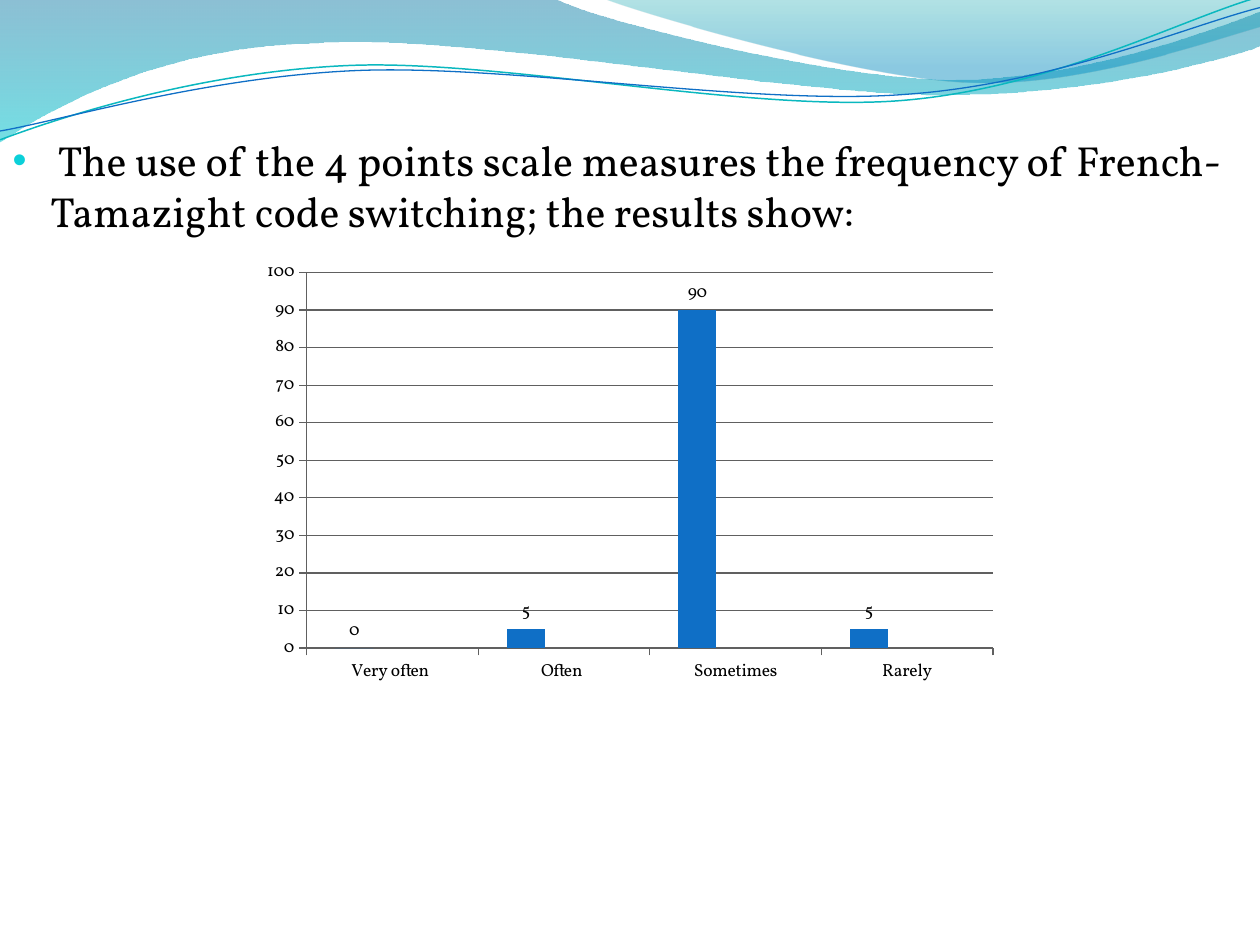
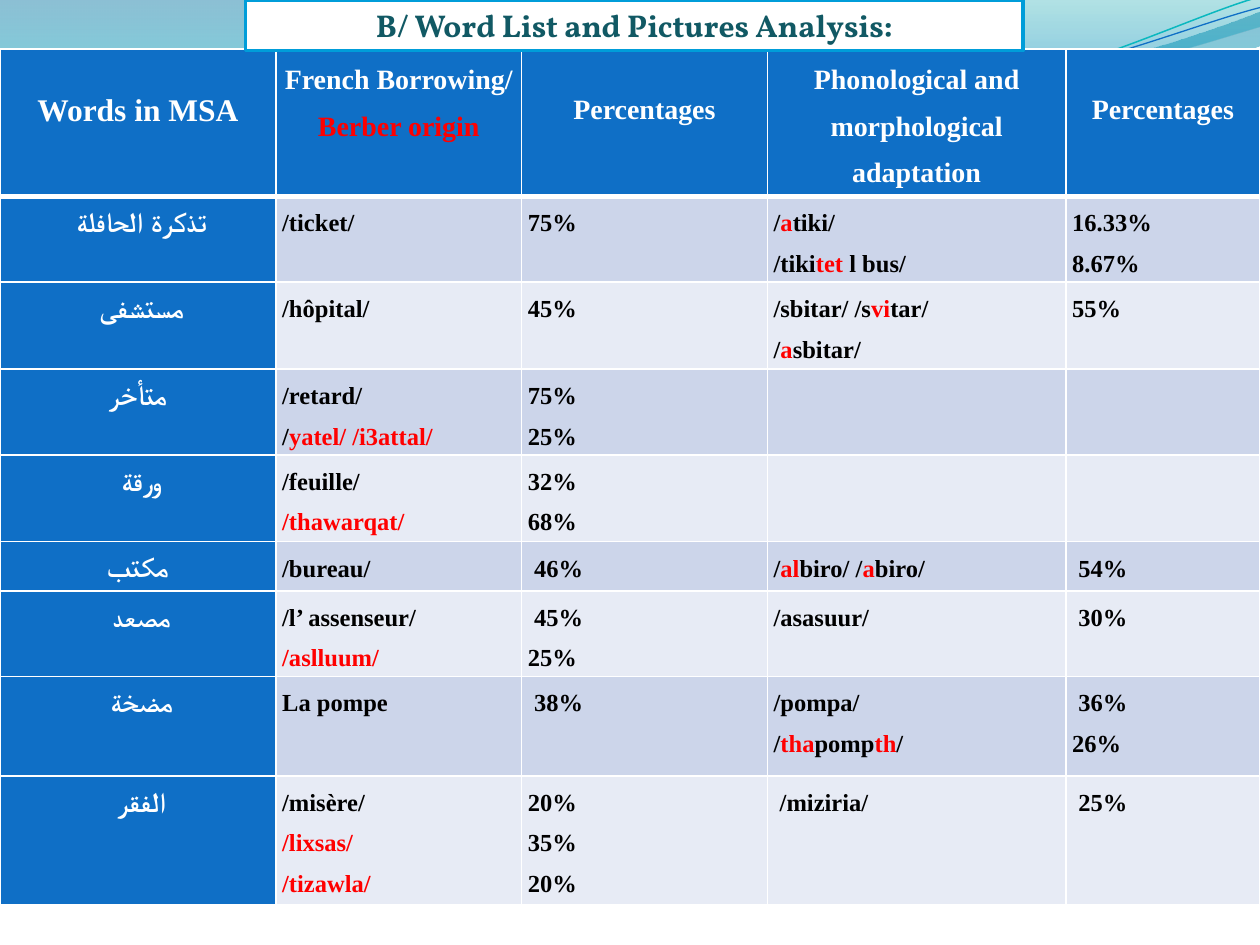
from math import cos, radians, sin
from lxml.etree import SubElement
from pptx import Presentation
from pptx.chart.data import CategoryChartData
from pptx.dml.color import RGBColor
from pptx.enum.chart import XL_CHART_TYPE, XL_LABEL_POSITION, XL_TICK_MARK
from pptx.enum.text import MSO_ANCHOR, MSO_AUTO_SIZE, PP_ALIGN
from pptx.oxml.ns import qn
from pptx.util import Inches, Pt

BLACK = RGBColor(0x00, 0x00, 0x00)
WHITE = RGBColor(0xFF, 0xFF, 0xFF)
RED = RGBColor(0xFF, 0x00, 0x00)
BLUE = RGBColor(0x0F, 0x6F, 0xC6)
SKY = RGBColor(0x00, 0x9D, 0xD9)
AQUA = RGBColor(0x0B, 0xD0, 0xD9)
TEAL = RGBColor(0x0A, 0xB8, 0xBF)
TITLE_TEAL = RGBColor(0x11, 0x59, 0x64)
GRID_GREY = RGBColor(0x60, 0x60, 0x60)
BAND_DARK = RGBColor(0xCC, 0xD5, 0xEA)
BAND_LIGHT = RGBColor(0xE7, 0xEB, 0xF5)

DISPLAY_FONT = "Vollkorn"
TABLE_FONT = "Times New Roman"
STRAND_TILT = 357.3
STRAND_CENTER = (4.99, 0.58)

WIDE_WAVE = [
    (0, 0), (4.4, -0.01),
    (4.76, 0.17, 6.64, 0.63, 7.58, 0.63), (8.53, 0.63, 9.58, 0.26, 10, 0.09),
    (10.01, 0.36),
    (9.83, 0.44, 8.7, 0.76, 7.46, 0.75), (6.22, 0.75, 3.82, 0.28, 2.57, 0.34),
    (1.29, 0.36, 0.46, 0.83, -0.01, 1.13),
]
RIGHT_WAVE = [
    (4.79, -0.01),
    (5.09, 0.11, 6.82, 0.62, 7.69, 0.65), (8.56, 0.69, 9.61, 0.32, 10, 0.21),
    (10, 0),
]
TEAL_STRAND = [
    (0, 1.11),
    (0.48, 0.93, 1.58, 0.57, 2.77, 0.52), (3.95, 0.47, 5.93, 0.89, 7.13, 0.8),
    (8.33, 0.71, 9.38, 0.15, 9.98, -0.02),
]
BLUE_STRAND = [
    (0, 1.04),
    (0.47, 0.96, 1.64, 0.61, 2.83, 0.56), (4.03, 0.51, 5.97, 0.84, 7.17, 0.75),
    (8.36, 0.67, 9.41, 0.21, 10, 0.06),
]
WAVES = [
    (WIDE_WAVE, [(0, RGBColor(0x00, 0x74, 0xA1), 45), (1, RGBColor(0x00, 0xC6, 0xCF), 55)]),
    (RIGHT_WAVE, [(0, RGBColor(0x00, 0xA1, 0xA9), 30), (0.8, RGBColor(0x00, 0x8B, 0xBF), 45)]),
]
STRANDS = [(TEAL_STRAND, TEAL, 0.85), (BLUE_STRAND, BLUE, 0.75)]

COLUMN_WIDTHS = [2.19, 1.95, 1.95, 2.37, 1.54]
ROW_HEIGHTS = [1.17, 0.68, 0.69, 0.68, 0.69, 0.39, 0.68, 0.79, 1.02]
HEADER_TOPS = [0.21, 0, 0.24, 0, 0.24]
WORD_ROWS = [
    ["Words in MSA", "French Borrowing/\n|Berber origin|", "Percentages",
     "Phonological and morphological adaptation", "Percentages"],
    [" تذكرة الحافلة", "/ticket/", "75%", "/|a|tiki/\n/tiki|tet| l bus/", "16.33%\n8.67%"],
    [" مستشفى", "/hôpital/", "45%", "/sbitar/ /s|vi|tar/\n/|a|sbitar/", "55%"],
    ["متأخر", "/retard/\n/|yatel/ /i3attal/|", "75%\n25%", "", ""],
    [" ورقة", "/feuille/\n|/thawarqat/|", "32%\n68%", "", ""],
    [" مكتب ", "/bureau/", " 46%", "/|al|biro/ /|a|biro/", " 54%"],
    [" مصعد", "/l’ assenseur/\n|/aslluum/|", " 45%\n25%", "/asasuur/", " 30%"],
    [" مضخة", "La pompe", " 38%", "/pompa/\n/|tha|pomp|th|/", " 36%\n26%"],
    [" الفقر", "/misère/\n|/lixsas/|\n|/tizawla/|", "20%\n35%\n20%", " /miziria/", " 25%"],
]


def to_points(segment):
    return [(Inches(x), Inches(y)) for x, y in zip(segment[::2], segment[1::2])]


def untilt(segment):
    angle = radians(360 - STRAND_TILT)
    center_x, center_y = STRAND_CENTER
    turned = []
    for x, y in zip(segment[::2], segment[1::2]):
        across, down = x - center_x, y - center_y
        turned.append(center_x + across * cos(angle) - down * sin(angle))
        turned.append(center_y + across * sin(angle) + down * cos(angle))
    return turned


def place(shape, left, top, width, height):
    shape.left, shape.top = Inches(left), Inches(top)
    shape.width, shape.height = Inches(width), Inches(height)


def style_font(font, name, size, color, bold=False):
    font.name, font.size, font.bold = name, Pt(size), bold
    font.color.rgb = color


class Deck:
    def __init__(self):
        self.presentation = Presentation()
        self.presentation.slide_width = Inches(10)
        self.presentation.slide_height = Inches(7.5)
        self.slide = None

    def add_slide(self, layout_index):
        layout = self.presentation.slide_layouts[layout_index]
        self.slide = self.presentation.slides.add_slide(layout)

    def decorate_master(self):
        shapes = [self.add_wave(*wave) for wave in WAVES]
        shapes += [self.add_strand(*strand) for strand in STRANDS]
        tree = self.presentation.slide_master.shapes.element
        for index, shape in enumerate(shapes):
            shape.element.nvSpPr.cNvPr.set("id", str(100 + index))
            tree.insert(2 + index, shape.element)

    def add_outline(self, outline, closed):
        segments = [to_points(segment) for segment in outline]
        builder = self.slide.shapes.build_freeform(*segments[0][0])
        builder.add_line_segments([points[-1] for points in segments[1:]], close=closed)
        shape = builder.convert_to_shape()
        shape.shadow.inherit = False
        for line, points in zip(shape.element.xpath(".//a:lnTo"), segments[1:]):
            if len(points) == 3:
                curve = line.makeelement(qn("a:cubicBezTo"))
                for x, y in points:
                    SubElement(curve, qn("a:pt"), x=str(x - shape.left), y=str(y - shape.top))
                line.getparent().replace(line, curve)
        return shape

    def add_strand(self, outline, color, width):
        strand = self.add_outline([untilt(segment) for segment in outline], False)
        strand.rotation = STRAND_TILT
        strand.fill.background()
        strand.line.color.rgb = color
        strand.line.width = Pt(width)
        return strand

    def add_wave(self, outline, stops):
        wave = self.add_outline(outline, True)
        wave.line.fill.background()
        wave.fill.gradient()
        wave.fill.gradient_angle = 270
        for stop, (position, color, _) in zip(wave.fill.gradient_stops, stops):
            stop.position = position
            stop.color.rgb = color
        for element, (_, _, opacity) in zip(wave.element.xpath(".//a:gs/a:srgbClr"), stops):
            SubElement(element, qn("a:alpha"), val=str(opacity * 1000))
        return wave

    def add_bullet(self, text):
        title = self.slide.shapes.title.element
        title.getparent().remove(title)
        body = self.slide.placeholders[1]
        place(body, 0, 1.02, 9.77, 6.33)
        frame = body.text_frame
        frame.text = text
        frame.auto_size = MSO_AUTO_SIZE.NONE
        paragraph = frame.paragraphs[0]
        paragraph.alignment = PP_ALIGN.JUSTIFY
        style_font(paragraph.runs[0].font, DISPLAY_FONT, 24, BLACK)
        properties = paragraph._p.get_or_add_pPr()
        properties.set("marL", str(Inches(0.3)))
        properties.set("indent", str(-Inches(0.3)))
        bullet_color = SubElement(properties, qn("a:buClr"))
        SubElement(bullet_color, qn("a:srgbClr"), val=str(AQUA))
        SubElement(properties, qn("a:buSzPct"), val="95000")
        SubElement(properties, qn("a:buChar"), char="•")

    def add_title(self, text):
        title = self.slide.shapes.title
        title.element.getparent().append(title.element)
        place(title, 1.95, 0, 6.17, 0.4)
        title.fill.solid()
        title.fill.fore_color.rgb = WHITE
        title.line.color.rgb = SKY
        title.line.width = Pt(2)
        frame = title.text_frame
        frame.text = text
        frame.auto_size = MSO_AUTO_SIZE.NONE
        frame.vertical_anchor = MSO_ANCHOR.MIDDLE
        frame.paragraphs[0].alignment = PP_ALIGN.CENTER
        style_font(frame.paragraphs[0].runs[0].font, DISPLAY_FONT, 18, TITLE_TEAL, True)

    def add_column_chart(self, categories, series):
        data = CategoryChartData()
        data.categories = categories
        for name, values, _ in series:
            data.add_series(name, values)
        chart = self.slide.shapes.add_chart(
            XL_CHART_TYPE.COLUMN_CLUSTERED,
            Inches(2), Inches(2), Inches(6), Inches(3.5), data).chart
        chart.has_legend = False
        chart.has_title = False
        style_font(chart.font, DISPLAY_FONT, 10, BLACK)
        plot = chart.plots[0]
        plot.gap_width = 150
        plot.overlap = 0
        plot.vary_by_categories = False
        for column, (_, _, color) in zip(plot.series, series):
            column.format.fill.solid()
            column.format.fill.fore_color.rgb = color
        labels = plot.series[0].data_labels
        labels.show_value = True
        labels.position = XL_LABEL_POSITION.OUTSIDE_END
        value_axis = chart.value_axis
        value_axis.minimum_scale, value_axis.maximum_scale = 0, 100
        value_axis.major_unit = 10
        value_axis.has_major_gridlines = True
        for axis in (value_axis, chart.category_axis):
            axis.major_tick_mark = XL_TICK_MARK.OUTSIDE
        for part in (value_axis, chart.category_axis, value_axis.major_gridlines):
            part.format.line.color.rgb = GRID_GREY
            part.format.line.width = Pt(0.75)

    def add_word_table(self, rows):
        table = self.slide.shapes.add_table(
            len(rows), len(COLUMN_WIDTHS), Inches(0), Inches(0.39),
            Inches(sum(COLUMN_WIDTHS)), Inches(sum(ROW_HEIGHTS))).table
        for column, width in zip(table.columns, COLUMN_WIDTHS):
            column.width = Inches(width)
        for row, height in zip(table.rows, ROW_HEIGHTS):
            row.height = Inches(height)
        for row_index, texts in enumerate(rows):
            band = BAND_DARK if row_index % 2 else BAND_LIGHT
            for column_index, text in enumerate(texts):
                cell = table.cell(row_index, column_index)
                is_header = row_index == 0
                is_heading = is_header or column_index == 0
                cell.margin_left = cell.margin_right = Inches(0.05)
                cell.margin_top = Inches(HEADER_TOPS[column_index] if is_header else 0)
                cell.margin_bottom = 0
                cell.fill.solid()
                cell.fill.fore_color.rgb = BLUE if is_heading else band
                self.add_borders(cell, 3 if is_header else 1, 3 if row_index == 1 else 1)
                size = 16 if is_heading else 14
                if is_header and column_index == 0:
                    size = 18
                self.fill_cell(cell, text, size, is_heading)

    def add_borders(self, cell, bottom, top):
        properties = cell._tc.get_or_add_tcPr()
        widths = {"a:lnL": 1, "a:lnR": 1, "a:lnT": top, "a:lnB": bottom}
        for index, (tag, width) in enumerate(widths.items()):
            border = SubElement(properties, qn(tag), w=str(Pt(width)))
            fill = SubElement(border, qn("a:solidFill"))
            SubElement(fill, qn("a:srgbClr"), val=str(WHITE))
            properties.insert(index, border)

    def fill_cell(self, cell, text, size, is_heading):
        if not text:
            return
        frame = cell.text_frame
        frame.text = text.replace("|", "")
        for paragraph, line in zip(frame.paragraphs, text.split("\n")):
            paragraph.text = ""
            paragraph.line_spacing = 1.5
            paragraph.alignment = PP_ALIGN.CENTER if is_heading else PP_ALIGN.LEFT
            for index, piece in enumerate(line.split("|")):
                if not piece:
                    continue
                run = paragraph.add_run()
                run.text = piece
                color = RED if index % 2 else WHITE if is_heading else BLACK
                style_font(run.font, TABLE_FONT, size, color, True)


def main():
    deck = Deck()

    deck.add_slide(1)
    deck.decorate_master()
    deck.add_bullet(" The use of the 4 points scale measures the frequency of "
                    "French-Tamazight code switching; the results show: ")
    deck.add_column_chart(
        ["Very often ", "Often ", "Sometimes", "Rarely"],
        [("Series 1", [0, 5, 90, 5], BLUE),
         ("Series 2", [None] * 4, SKY),
         ("Series 3", [None] * 4, AQUA)])

    deck.add_slide(5)
    deck.add_word_table(WORD_ROWS)
    deck.add_title("B/ Word List and Pictures Analysis:")

    deck.presentation.save("out.pptx")


if __name__ == "__main__":
    main()
